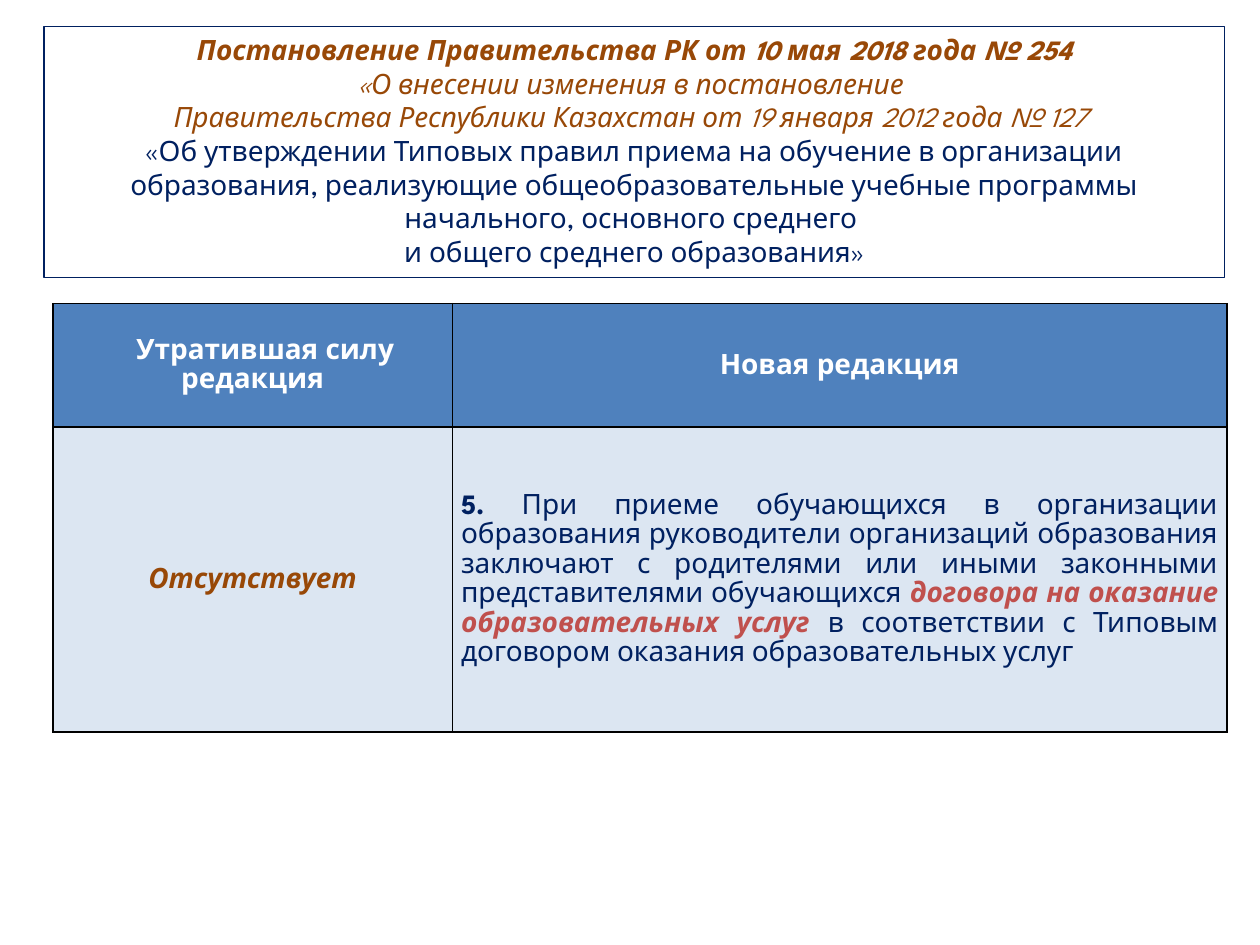
from dataclasses import dataclass

from lxml import etree
from pptx import Presentation
from pptx import util as u
from pptx.dml.color import RGBColor
from pptx.enum import text
from pptx.oxml.ns import qn


@dataclass(frozen=True)
class Theme:
    font: str = "League Spartan"
    size: int = 16
    navy: str = "002060"
    brown: str = "984807"
    red: str = "C0504D"
    white: str = "FFFFFF"
    black: str = "000000"
    header_fill: str = "4F81BD"
    body_fill: str = "DCE6F2"
    frame_width: float = 0.75
    border_width: float = 1
    table_spacing: float = 1.15


theme = Theme()
CENTER, JUSTIFY = text.PP_ALIGN.CENTER, text.PP_ALIGN.JUSTIFY


def add_run(paragraph, wording, color, bold=False, italic=False):
    run = paragraph.add_run()
    run.text = wording
    run.font.name = theme.font
    run.font.size = u.Pt(theme.size)
    run.font.bold = bold
    run.font.italic = italic
    run.font.color.rgb = RGBColor.from_string(color)


def add_borders(cell):
    properties = cell._tc.get_or_add_tcPr()
    for position, side in enumerate(("a:lnL", "a:lnR", "a:lnT", "a:lnB")):
        line = etree.Element(qn(side), w=str(u.Pt(theme.border_width)))
        fill = etree.SubElement(line, qn("a:solidFill"))
        etree.SubElement(fill, qn("a:srgbClr"), val=theme.black)
        properties.insert(position, line)


presentation = Presentation()
presentation.slide_width, presentation.slide_height = u.Inches(10), u.Inches(7.5)
slide = presentation.slides.add_slide(presentation.slide_layouts[5])

# Framed heading
title = slide.shapes.title
title.left, title.top = u.Inches(0.35), u.Inches(0.21)
title.width, title.height = u.Inches(9.37), u.Inches(1.99)
title.line.color.rgb = RGBColor.from_string(theme.navy)
title.line.width = u.Pt(theme.frame_width)
frame = title.text_frame
frame.word_wrap = True
frame.auto_size = text.MSO_AUTO_SIZE.SHAPE_TO_FIT_TEXT
frame.vertical_anchor = text.MSO_ANCHOR.TOP

heading = [
    ("Постановление Правительства РК от 10 мая 2018 года № 254", theme.brown, True, True),
    ("«О внесении изменения в постановление ", theme.brown, False, True),
    ("Правительства Республики Казахстан от 19 января 2012 года № 127 ", theme.brown, False, True),
    ("«Об утверждении Типовых правил приема на обучение в организации образования, "
     "реализующие общеобразовательные учебные программы начального, основного среднего ",
     theme.navy),
    ("и общего среднего образования»", theme.navy),
]
for index, line in enumerate(heading):
    paragraph = frame.add_paragraph() if index else frame.paragraphs[0]
    paragraph.alignment = CENTER
    add_run(paragraph, *line)

# Comparison of the two wordings: alignment and runs of each cell
rows = [
    [
        (CENTER, [("Утратившая силу редакция", theme.white, True)]),
        (CENTER, [("Новая редакция", theme.white, True)]),
    ],
    [
        (CENTER, [("Отсутствует", theme.brown, True, True)]),
        (JUSTIFY, [
            ("5.", theme.navy, True),
            (" При приеме обучающихся в организации образования руководители организаций "
             "образования заключают с родителями или иными законными представителями "
             "обучающихся ", theme.navy),
            ("договора на оказание образовательных услуг ", theme.red, True, True),
            ("в соответствии с Типовым договором оказания образовательных услуг", theme.navy),
        ]),
    ],
]
column_widths, row_heights = (3.17, 6.15), (0.98, 2.42)
table = slide.shapes.add_table(
    len(rows), len(column_widths), u.Inches(0.42), u.Inches(2.41),
    u.Inches(sum(column_widths)), u.Inches(sum(row_heights)),
).table
for column, width in zip(table.columns, column_widths):
    column.width = u.Inches(width)
for row, height in zip(table.rows, row_heights):
    row.height = u.Inches(height)

for row_index, row in enumerate(rows):
    for column_index, (alignment, runs) in enumerate(row):
        cell = table.cell(row_index, column_index)
        cell.fill.solid()
        cell.fill.fore_color.rgb = RGBColor.from_string(
            theme.body_fill if row_index else theme.header_fill)
        cell.vertical_anchor = text.MSO_ANCHOR.MIDDLE
        cell.margin_left = cell.margin_right = u.Inches(0.07)
        cell.margin_top = cell.margin_bottom = 0
        add_borders(cell)
        paragraph = cell.text_frame.paragraphs[0]
        paragraph.alignment = alignment
        paragraph.line_spacing = theme.table_spacing
        for run in runs:
            add_run(paragraph, *run)

# The first heading cell has a first-line indent
first_paragraph = table.cell(0, 0).text_frame.paragraphs[0]
first_paragraph._p.get_or_add_pPr().set("indent", str(u.Inches(0.2)))

presentation.save("out.pptx")
